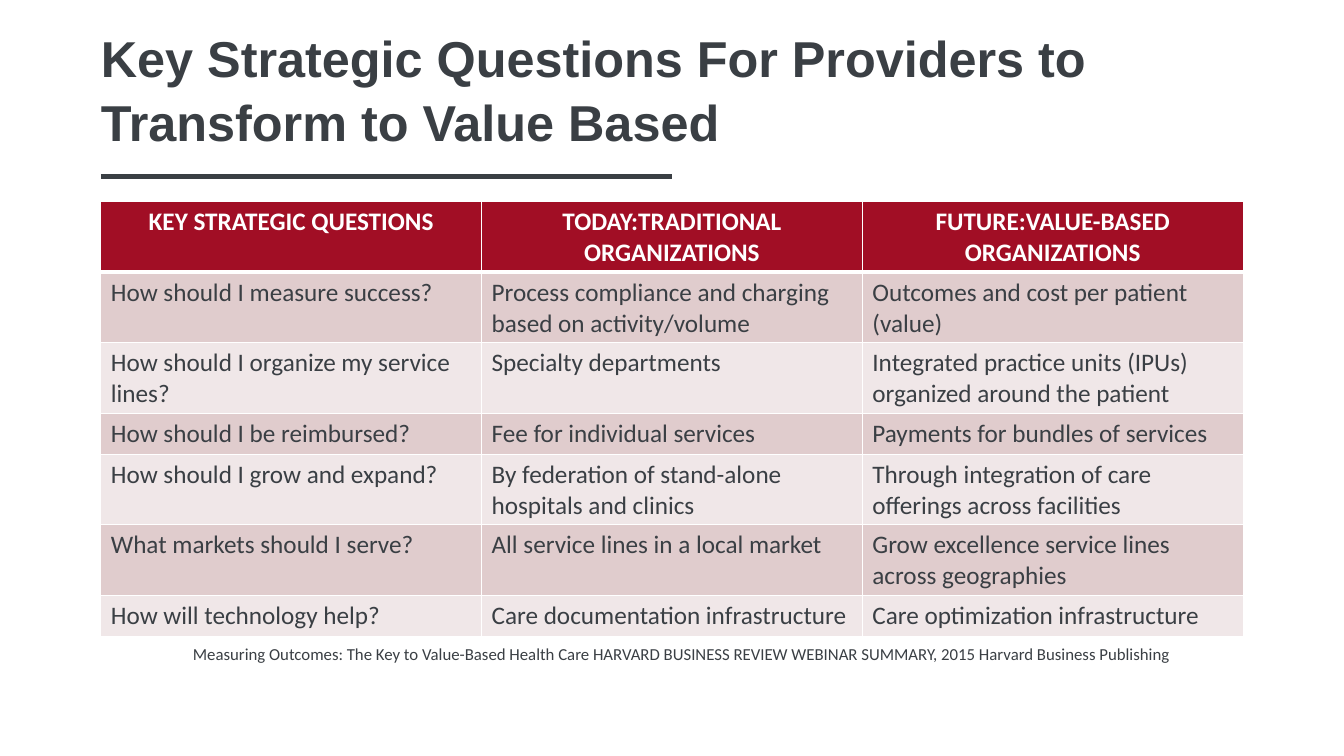
from lxml.etree import SubElement
from pptx import Presentation
from pptx.dml.color import RGBColor
from pptx.enum.shapes import MSO_CONNECTOR
from pptx.enum.text import MSO_ANCHOR, PP_ALIGN
from pptx.oxml.ns import qn
from pptx.util import Pt

WHITE = RGBColor(0xFF, 0xFF, 0xFF)
SLATE = RGBColor(0x3A, 0x3F, 0x44)
CRIMSON = RGBColor(0xA1, 0x0E, 0x25)
ROSE = RGBColor(0xE0, 0xCC, 0xCD)
PALE_ROSE = RGBColor(0xF0, 0xE7, 0xE8)

LEFT, WIDTH = 72, 816
TABLE_TOP, ROW_HEIGHT = 144, 29.2

ROWS = [
    ("KEY STRATEGIC QUESTIONS", "TODAY:TRADITIONAL ORGANIZATIONS",
     "FUTURE:VALUE-BASED ORGANIZATIONS"),
    ("How should I measure success?",
     "Process compliance and charging based on activity/volume",
     "Outcomes and cost per patient (value)"),
    ("How should I organize my service lines?", "Specialty departments",
     "Integrated practice units (IPUs) organized around the patient"),
    ("How should I be reimbursed?", "Fee for individual services",
     "Payments for bundles of services"),
    ("How should I grow and expand?",
     "By federation of stand-alone hospitals and clinics",
     "Through integration of care offerings across facilities"),
    ("What markets should I serve?", "All service lines in a local market",
     "Grow excellence service lines across geographies"),
    ("How will technology help?", "Care documentation infrastructure",
     "Care optimization infrastructure"),
]


def write_text(frame, text, size=18, font="Calibri", color=SLATE, bold=False,
               align=PP_ALIGN.LEFT, spacing=None):
    frame.word_wrap = True
    para = frame.paragraphs[0]
    para.alignment = align
    para.line_spacing = spacing
    span = para.add_run()
    span.text = text
    span.font.size = Pt(size)
    span.font.name = font
    span.font.bold = bold
    span.font.color.rgb = color


def add_text_box(page, left, top, width, height, text, anchor=MSO_ANCHOR.TOP,
                 margin=None, **text_format):
    box = page.shapes.add_textbox(Pt(left), Pt(top), Pt(width), Pt(height))
    frame = box.text_frame
    frame.vertical_anchor = anchor
    if margin is not None:
        frame.margin_left = frame.margin_right = Pt(margin)
        frame.margin_top = frame.margin_bottom = Pt(margin)
    write_text(frame, text, **text_format)


def add_rule(page, left, top, width):
    rule = page.shapes.add_connector(
        MSO_CONNECTOR.STRAIGHT, Pt(left), Pt(top), Pt(left + width), Pt(top))
    rule.line.color.rgb = SLATE
    rule.line.width = Pt(4)
    SubElement(rule._element.spPr, qn("a:effectLst"))


def set_borders(cell, top, bottom):
    """Draw white borders; top and bottom are widths in points."""
    properties = cell._tc.get_or_add_tcPr()
    for side, width in (("L", 1), ("R", 1), ("T", top), ("B", bottom)):
        border = SubElement(properties, qn(f"a:ln{side}"), w=str(Pt(width)))
        fill = SubElement(border, qn("a:solidFill"))
        SubElement(fill, qn("a:srgbClr"), val=str(WHITE))


def add_question_table(page):
    table = page.shapes.add_table(
        len(ROWS), len(ROWS[0]), Pt(LEFT), Pt(TABLE_TOP),
        Pt(WIDTH), Pt(ROW_HEIGHT * len(ROWS))).table
    for row, texts in enumerate(ROWS):
        header = row == 0
        band = CRIMSON if header else (PALE_ROSE, ROSE)[row % 2]
        for column, text in enumerate(texts):
            cell = table.cell(row, column)
            set_borders(cell, top=3 if row == 1 else 1, bottom=3 if header else 1)
            cell.fill.solid()
            cell.fill.fore_color.rgb = band
            write_text(cell.text_frame, text, bold=header,
                       color=WHITE if header else SLATE,
                       align=PP_ALIGN.CENTER if header else PP_ALIGN.LEFT)


def main():
    deck = Presentation()
    deck.slide_width, deck.slide_height = Pt(960), Pt(540)
    page = deck.slides.add_slide(deck.slide_layouts[6])
    add_rule(page, LEFT, 126, 408)
    add_text_box(page, LEFT, 36, WIDTH, 72,
                 "Key Strategic Questions For Providers to Transform to Value Based",
                 anchor=MSO_ANCHOR.BOTTOM, margin=0, size=36, font="Arial",
                 bold=True, spacing=1.05)
    add_question_table(page)
    add_text_box(page, 85.7, 456.5, 803, 21.6,
                 "Measuring Outcomes: The Key to Value-Based Health Care HARVARD "
                 "BUSINESS REVIEW WEBINAR SUMMARY, 2015 Harvard Business Publishing",
                 size=12, align=PP_ALIGN.CENTER)
    deck.save("out.pptx")


if __name__ == "__main__":
    main()
